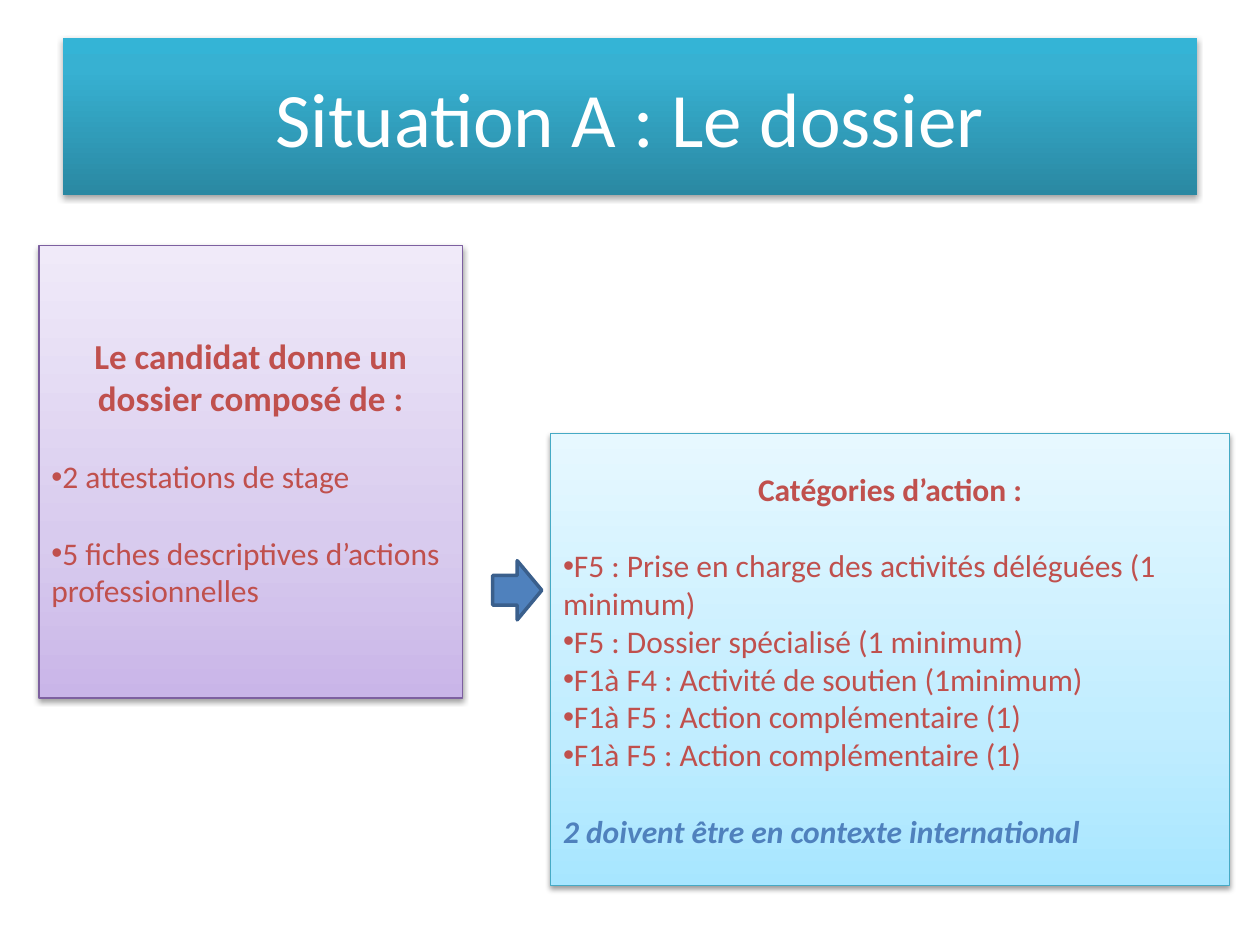
import pptx
import pptx.util
import pptx.dml.color
import pptx.enum.shapes
import pptx.enum.text
import pptx.oxml
import pptx.oxml.ns

Inches, Pt = pptx.util.Inches, pptx.util.Pt
PP_ALIGN = pptx.enum.text.PP_ALIGN
NS = pptx.oxml.ns.nsdecls("a")
qn = pptx.oxml.ns.qn


def rgb(value):
    return pptx.dml.color.RGBColor.from_string(value)


def style_panel(sp, stops, alpha, dist):
    sp.fill.gradient()
    sp.fill.gradient_angle = 90
    gs_lst = sp._element.spPr.find(".//" + qn("a:gsLst"))
    for gs in list(gs_lst):
        gs_lst.remove(gs)
    for pos, color in stops:
        gs_lst.append(pptx.oxml.parse_xml(
            f'<a:gs {NS} pos="{pos * 1000}"><a:srgbClr val="{color}"/></a:gs>'))
    sp.shadow.inherit = False
    sp._element.spPr.find(qn("a:effectLst")).append(pptx.oxml.parse_xml(
        f'<a:outerShdw {NS} blurRad="{Pt(3.1)}" dist="{Pt(dist)}" dir="5400000" rotWithShape="0">'
        f'<a:srgbClr val="000000"><a:alpha val="{alpha * 1000}"/></a:srgbClr></a:outerShdw>'))


prs = pptx.Presentation()
prs.slide_width, prs.slide_height = Inches(10), Inches(7.5)
s = prs.slides.add_slide(prs.slide_layouts[5])

title = s.shapes.title
title.left, title.top, title.width, title.height = map(Inches, (0.5, 0.3, 9, 1.25))
style_panel(title, [(0, "2A88A2"), (80, "37B1D2"), (100, "34B4D6")], 35, 1.8)
title.line.fill.background()
tf = title.text_frame
tf.vertical_anchor = pptx.enum.text.MSO_ANCHOR.MIDDLE
p = tf.paragraphs[0]
p.alignment = PP_ALIGN.CENTER
r = p.add_run()
r.text = "Situation A : Le dossier"
for name, value in {"size": Pt(44), "name": "Calibri"}.items():
    setattr(r.font, name, value)
r.font.color.rgb = rgb("FFFFFF")

RED, BLUE = "C0504D", "4F81BD"
LINE_GAP = 22
heading = {"bold": True}
note = {"bold": True, "italic": True}

panels = [
    ((0.31, 1.95, 3.36, 3.59), [(0, "C9B5E8"), (35, "D8CBEE"), (100, "F0EAF9")], "7D60A0", [
        ("Le candidat donne un dossier composé de :", 20, RED, heading, False, 0),
        ("2 attestations de stage", 18, RED, {}, True, LINE_GAP),
        ("5 fiches descriptives d’actions professionnelles", 18, RED, {}, True, LINE_GAP),
    ]),
    ((4.37, 3.44, 5.39, 3.59), [(0, "A7E6FF"), (35, "C1EDFF"), (100, "E7F8FF")], "46AAC5", [
        ("Catégories d’action :", 18, RED, heading, False, 0),
        ("F5 : Prise en charge des activités déléguées (1 minimum)", 18, RED, {}, True, LINE_GAP),
        ("F5 : Dossier spécialisé (1 minimum)", 18, RED, {}, True, 0),
        ("F1à F4 : Activité de soutien (1minimum)", 18, RED, {}, True, 0),
        ("F1à F5 : Action complémentaire (1)", 18, RED, {}, True, 0),
        ("F1à F5 : Action complémentaire (1)", 18, RED, {}, True, 0),
        ("2 doivent être en contexte international", 18, BLUE, note, False, LINE_GAP),
    ]),
]

for box, stops, border, lines in panels:
    sp = s.shapes.add_shape(pptx.enum.shapes.MSO_SHAPE.RECTANGLE, *map(Inches, box))
    sp.line.color.rgb = rgb(border)
    sp.line.width = Pt(0.75)
    style_panel(sp, stops, 38, 1.6)
    tf = sp.text_frame
    tf.word_wrap = True
    tf.vertical_anchor = pptx.enum.text.MSO_ANCHOR.MIDDLE
    for i, (text, size, color, fmt, bullet, gap) in enumerate(lines):
        p = tf.add_paragraph() if i else tf.paragraphs[0]
        p.alignment = PP_ALIGN.LEFT if i else PP_ALIGN.CENTER
        p.space_before = Pt(gap)
        if bullet:
            pPr = p._p.get_or_add_pPr()
            pPr.append(pptx.oxml.parse_xml(f'<a:buFont {NS} typeface="Arial"/>'))
            pPr.append(pptx.oxml.parse_xml(f'<a:buChar {NS} char="•"/>'))
        r = p.add_run()
        r.text = text
        r.font.color.rgb = rgb(color)
        for name, value in {"size": Pt(size), "name": "Calibri", **fmt}.items():
            setattr(r.font, name, value)

arrow = s.shapes.add_shape(pptx.enum.shapes.MSO_SHAPE.RIGHT_ARROW,
                           *map(Inches, (3.91, 4.45, 0.39, 0.47)))
arrow.shadow.inherit = False
arrow.fill.solid()
arrow.fill.fore_color.rgb = rgb(BLUE)
arrow.line.color.rgb = rgb("3A5F8C")
arrow.line.width = Pt(2)

prs.save("out.pptx")
